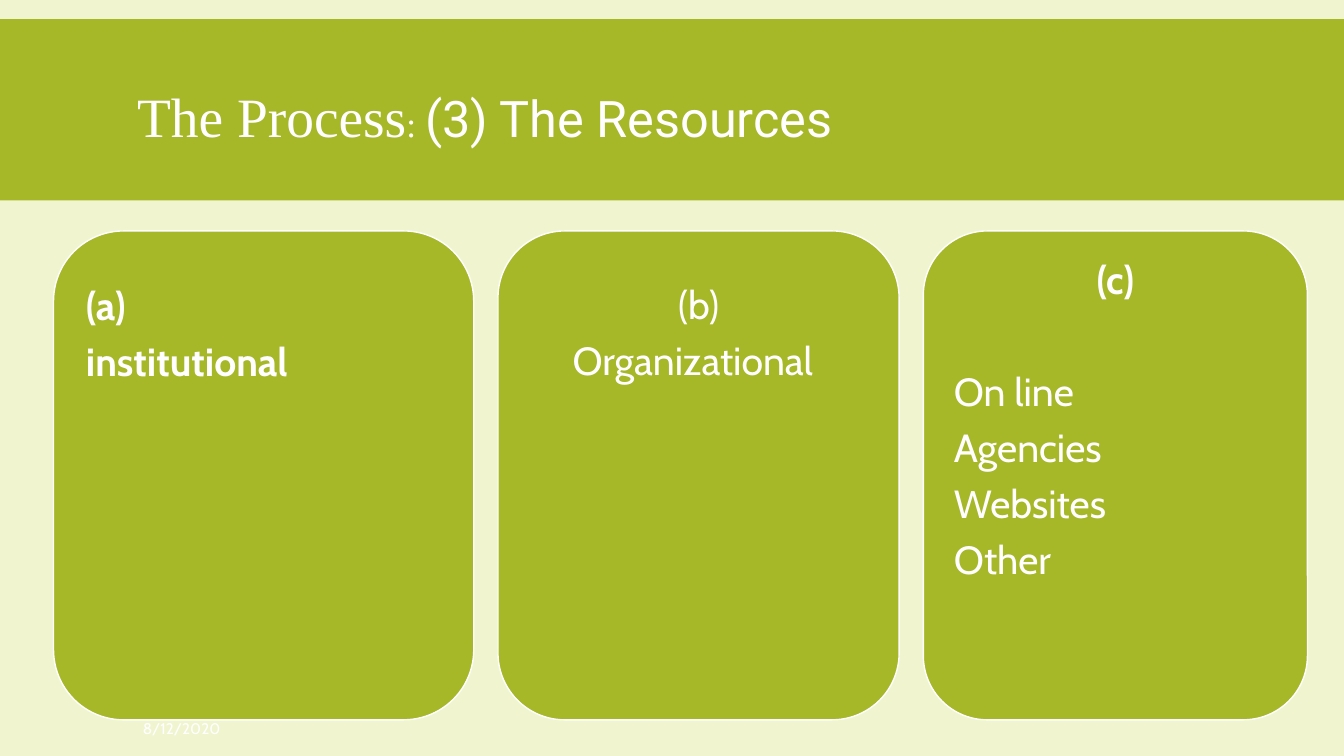
from pptx import Presentation
from pptx import util as u
from pptx.dml.color import RGBColor
from pptx.enum import shapes, text

GREEN, WHITE, CREAM = "A6B727", "FFFFFF", "F0F5D0"
LEFT, CENTER = text.PP_ALIGN.LEFT, text.PP_ALIGN.CENTER


def paint(fill, colour):
    fill.solid()
    fill.fore_color.rgb = RGBColor.from_string(colour)


def set_font(font, size, name=None, bold=None):
    font.size = u.Pt(size)
    font.name = name
    font.bold = bold
    paint(font.fill, WHITE)


def add_panel(s, kind, left, top, width, height):
    sp = s.shapes.add_shape(kind, u.Cm(left), u.Cm(top), u.Cm(width), u.Cm(height))
    sp.shadow.inherit = False
    paint(sp.fill, GREEN)
    return sp


def add_header(s, left, top, width, height):
    band = add_panel(s, shapes.MSO_SHAPE.RECTANGLE, left, top, width, height)
    band.line.fill.background()
    title = s.shapes.title
    title.element.addprevious(band.element)
    title.left, title.top = u.Cm(left + 3.2), u.Cm(top + 2.21)
    title.width, title.height = u.Cm(24.51), u.Cm(1.96)
    tf = title.text_frame
    tf.auto_size = text.MSO_AUTO_SIZE.NONE
    tf.vertical_anchor = text.MSO_ANCHOR.BOTTOM
    tf.margin_top, tf.margin_bottom = 0, u.Cm(0.89)
    p = tf.paragraphs[0]
    p.alignment = LEFT
    p.line_spacing = 0.85
    for words, size, name in (
        ("The Process", 39.6, "Times New Roman"),
        (": ", 25.2, "Times New Roman"),
        ("(3) The Resources", 36, "Roboto"),
    ):
        r = p.add_run()
        r.text = words
        set_font(r.font, size, name)


def add_card(s, left, top, width, height, inset, lines):
    sp = add_panel(s, shapes.MSO_SHAPE.ROUNDED_RECTANGLE, left, top, width, height)
    paint(sp.line.fill, WHITE)
    sp.line.width = u.Pt(1)
    tf = sp.text_frame
    tf.vertical_anchor = text.MSO_ANCHOR.TOP
    tf.margin_left = tf.margin_right = u.Cm(0.3)
    tf.margin_top = u.Cm(inset)
    for i, (words, align, bold, after) in enumerate(lines):
        p = tf.add_paragraph() if i else tf.paragraphs[0]
        p.text = words
        p.alignment = align
        p.line_spacing = 0.9
        p.space_after = u.Pt(after)
        set_font(p.font, 28, "Cabin", bold)


def add_cards(s, left, top, height, gap):
    cards = (
        (10.59, 0.89, [("(a)", LEFT, True, 9.8), ("institutional", LEFT, True, 9.8)]),
        (10.11, 0.89, [("(b)", CENTER, False, 9.8), ("Organizational \t", CENTER, False, 9.8)]),
        (9.68, 0.28, [("(c)", CENTER, True, 49.8)]
         + [(words, LEFT, False, 9.8) for words in ("On line", "Agencies", "Websites", "Other")]),
    )
    for width, inset, lines in cards:
        add_card(s, left, top, width, height, inset, lines)
        left += width + gap


def add_date(s, left, top, width, height):
    tf = s.shapes.add_textbox(u.Cm(left), u.Cm(top), u.Cm(width), u.Cm(height)).text_frame
    tf.word_wrap = True
    tf.vertical_anchor = text.MSO_ANCHOR.MIDDLE
    p = tf.paragraphs[0]
    p.text = "8/12/2020"
    set_font(p.font, 11, "Cabin")


def main():
    prs = Presentation()
    prs.slide_width, prs.slide_height = u.Cm(33.87), u.Cm(19.05)
    s = prs.slides.add_slide(prs.slide_layouts[5])
    paint(s.background.fill, CREAM)
    add_header(s, 0, 0.48, 33.87, 4.57)
    add_date(s, 3.35, 17.9, 6, 0.9)
    add_cards(s, 1.35, 5.82, 12.32, 0.61)
    prs.save("out.pptx")


if __name__ == "__main__":
    main()
